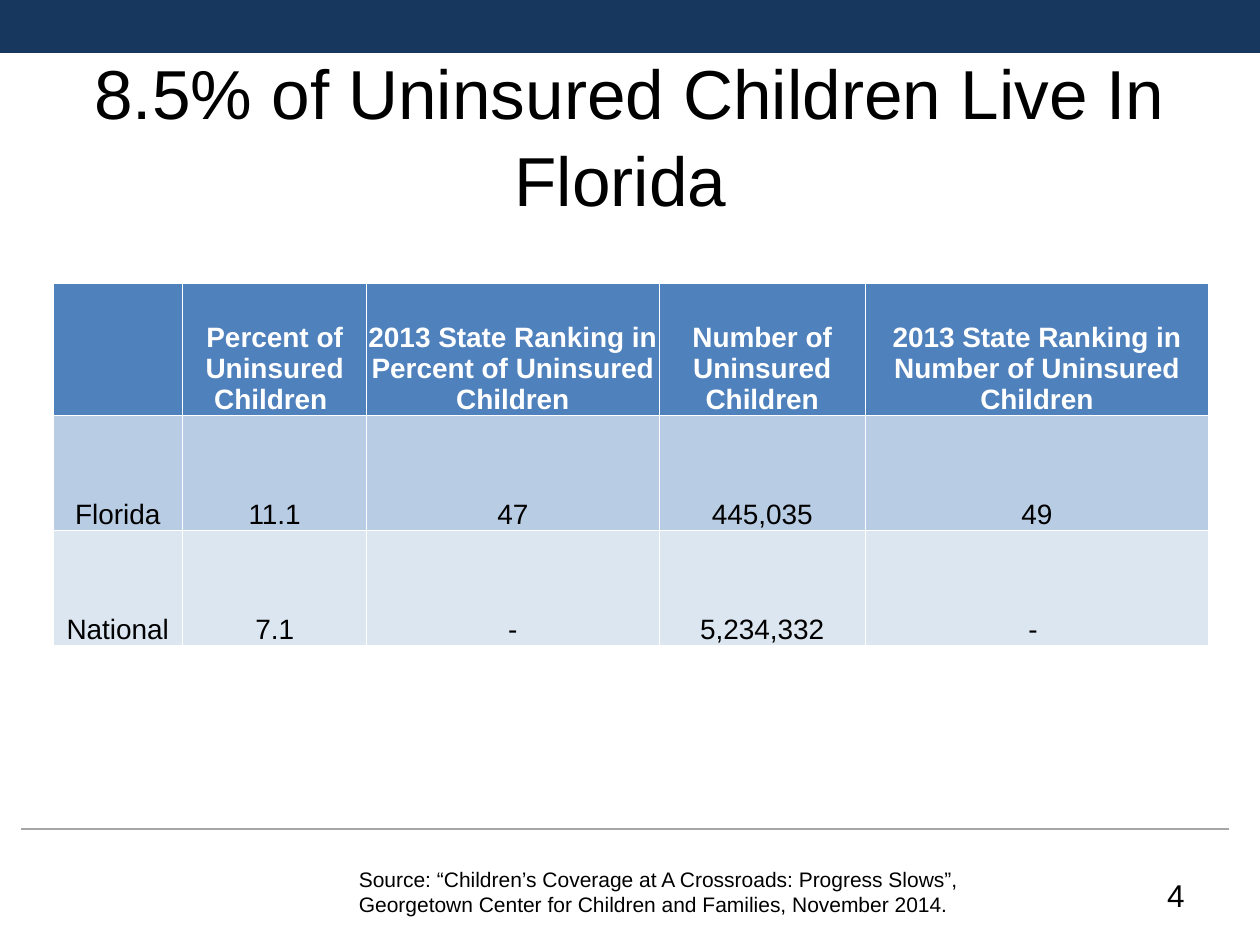
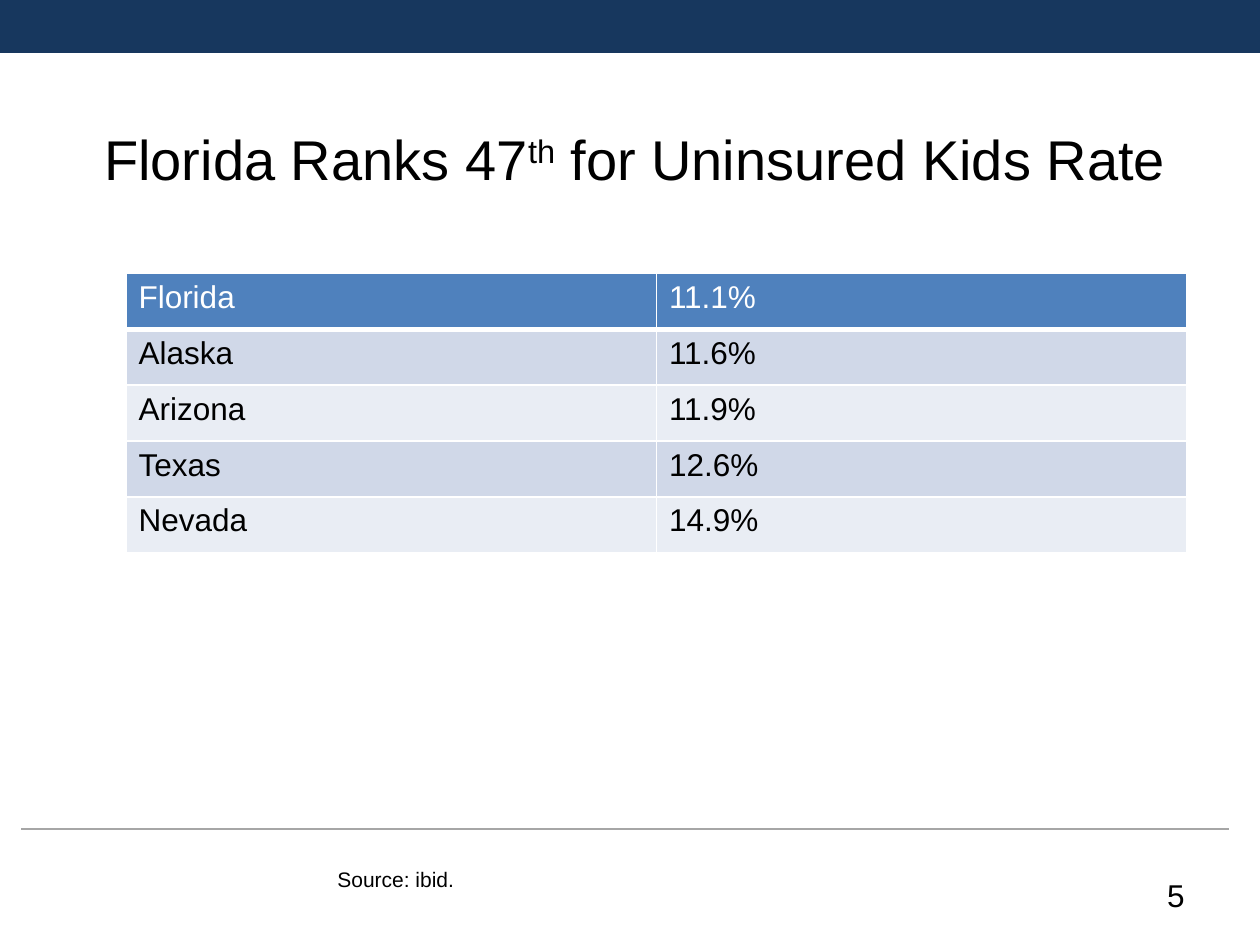
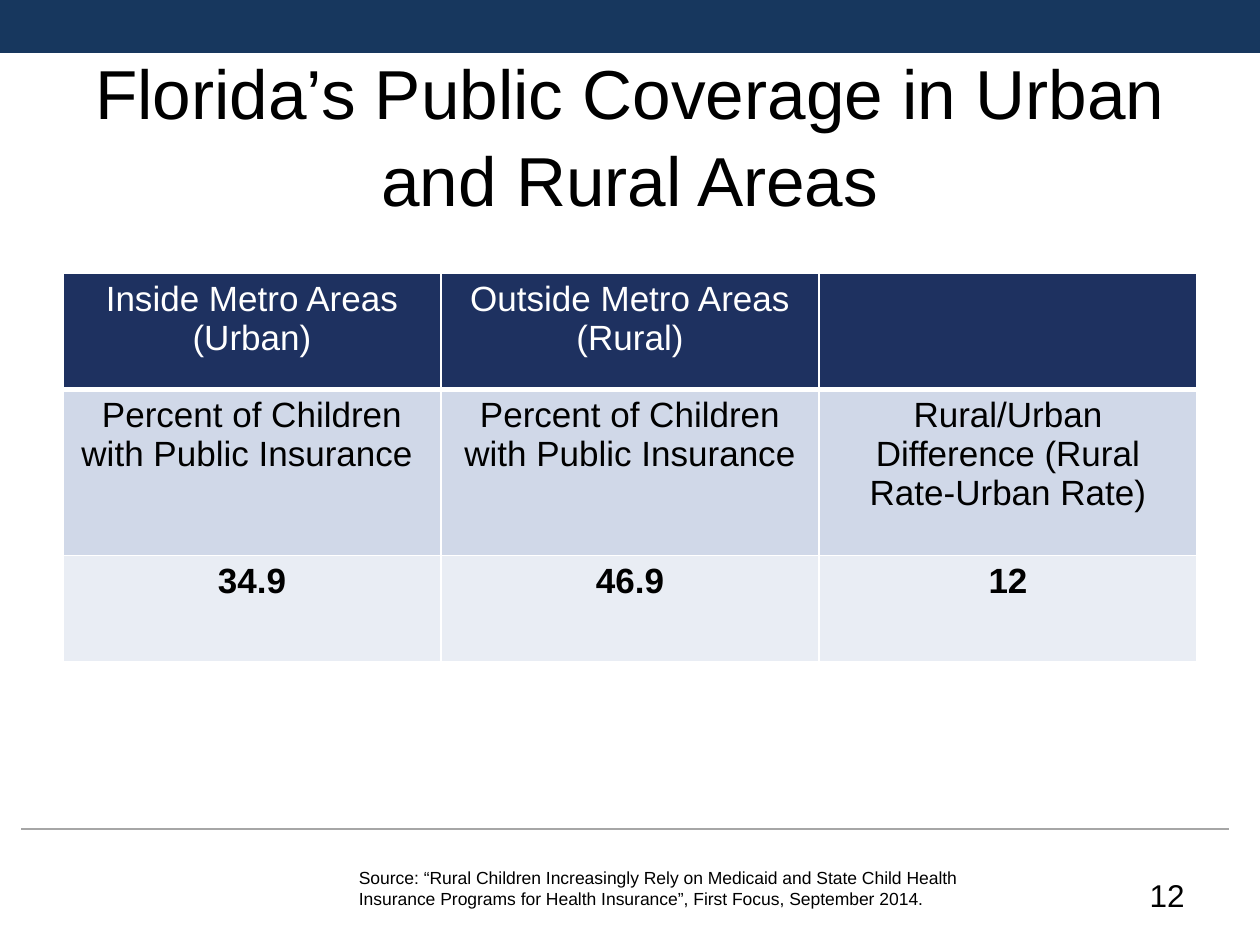
from lxml.etree import SubElement
from pptx import Presentation
from pptx.dml.color import RGBColor
from pptx.enum.shapes import MSO_CONNECTOR, MSO_SHAPE
from pptx.enum.text import MSO_ANCHOR, PP_ALIGN
from pptx.oxml.ns import qn
from pptx.util import Inches, Pt

COLORS = {
    "band": "17375E",
    "rule": "A6A6A6",
    "text": "000000",
    "white": "FFFFFF",
    "blue": "4F81BD",
    "navy": "1E3160",
    "ranking_dark": "B8CCE4",
    "ranking_light": "DCE6F1",
    "stripe_dark": "D0D8E8",
    "stripe_light": "E9EDF4",
}
STRIPES = ("stripe_dark", "stripe_light")
FONT = "Arial"


def rgb(name):
    return RGBColor.from_string(COLORS[name])


def write_text(paragraph, text, size=18, color="text", bold=False,
               align=PP_ALIGN.LEFT, superscript=False):
    paragraph.alignment = align
    run = paragraph.add_run()
    run.text = text
    run.font.name = FONT
    run.font.size = Pt(size)
    run.font.bold = bold
    run.font.color.rgb = rgb(color)
    if superscript:
        run.font._element.set("baseline", "30000")


class Deck:
    def __init__(self):
        self.presentation = Presentation()
        self.presentation.slide_width = Inches(10)
        self.presentation.slide_height = Inches(7.5)
        self.slide = None

    def add_slide(self, number):
        self.slide = self.presentation.slides.add_slide(self.presentation.slide_layouts[6])
        self.band()
        self.rule()
        frame = self.text_frame(7.17, 6.9, 2.33, 0.4)
        write_text(frame.paragraphs[0], str(number), align=PP_ALIGN.RIGHT)

    def band(self):
        shape = self.slide.shapes.add_shape(
            MSO_SHAPE.RECTANGLE, 0, 0, Inches(10), Inches(0.42))
        shape.shadow.inherit = False
        shape.fill.solid()
        shape.fill.fore_color.rgb = rgb("band")
        shape.line.fill.background()

    def rule(self):
        connector = self.slide.shapes.add_connector(
            MSO_CONNECTOR.STRAIGHT, Inches(0.17), Inches(6.58), Inches(9.75), Inches(6.58))
        connector.line.color.rgb = rgb("rule")
        connector.line.width = Pt(0.75)
        SubElement(connector._element.spPr, qn("a:effectLst"))

    def text_frame(self, left, top, width, height):
        shape = self.slide.shapes.add_textbox(
            Inches(left), Inches(top), Inches(width), Inches(height))
        shape.text_frame.word_wrap = True
        return shape.text_frame

    def title(self, *parts, width=9, height=1.05, size=39.6):
        frame = self.text_frame(0.5, 0.5, width, height)
        frame.vertical_anchor = MSO_ANCHOR.MIDDLE
        frame.margin_top = Inches(0.12)
        paragraph = frame.paragraphs[0]
        paragraph.line_spacing = 1.04
        for text in parts:
            write_text(paragraph, text, size=size, align=PP_ALIGN.CENTER,
                       superscript=text == "th")

    def source(self, text, left=2.75, height=0.5, size=12):
        frame = self.text_frame(left, 6.83, 5, height)
        write_text(frame.paragraphs[0], text, size=size)

    def table(self, rows, left, top, widths, heights, header, stripes=STRIPES,
              size=18, align=PP_ALIGN.CENTER, bold_rows=(), border=1,
              header_border=3, tight=False):
        table = self.slide.shapes.add_table(
            len(rows), len(widths), Inches(left), Inches(top),
            Inches(sum(widths)), Inches(sum(heights))).table
        table.first_row = table.horz_banding = False
        for column, width in zip(table.columns, widths):
            column.width = Inches(width)
        for index, (row, values) in enumerate(zip(table.rows, rows)):
            row.height = Inches(heights[index])
            fill = stripes[(index - 1) % 2] if index else header
            top_border = header_border if index == 1 else border
            bottom_border = border if index else header_border
            for cell, value in zip(row.cells, values):
                self.cell_borders(cell, L=border, R=border, T=top_border, B=bottom_border)
                cell.fill.solid()
                cell.fill.fore_color.rgb = rgb(fill)
                if tight:
                    cell.vertical_anchor = MSO_ANCHOR.BOTTOM
                    cell.margin_left = cell.margin_right = cell.margin_top = Inches(0.01)
                    cell.margin_bottom = 0
                if value:
                    write_text(cell.text_frame.paragraphs[0], value, size=size,
                               color="text" if index else "white",
                               bold=index in bold_rows, align=align)

    def cell_borders(self, cell, **widths):
        properties = cell._tc.get_or_add_tcPr()
        for side, width in widths.items():
            line = SubElement(properties, qn(f"a:ln{side}"), w=str(Pt(width)))
            SubElement(SubElement(line, qn("a:solidFill")), qn("a:srgbClr"),
                       val=COLORS["white"])


def main():
    deck = Deck()

    deck.add_slide(4)
    deck.title("8.5% of Uninsured Children Live In Florida ")
    deck.table(
        [["", "Percent of Uninsured Children ",
          "2013 State Ranking in Percent of Uninsured Children",
          "Number of Uninsured Children",
          "2013 State Ranking in Number of Uninsured Children"],
         ["Florida", "11.1", "47", "445,035", "49"],
         ["National", "7.1", "-", "5,234,332", "- "]],
        0.42, 2.25, [1.03, 1.46, 2.32, 1.64, 2.72], [1.05, 0.91, 0.91], "blue",
        stripes=("ranking_dark", "ranking_light"), size=16, bold_rows=(0,),
        border=0.5, header_border=0.5, tight=True)
    deck.source("Source: “Children’s Coverage at A Crossroads: Progress Slows”, "
                "Georgetown Center for Children and Families, November 2014.")

    deck.add_slide(5)
    deck.title("Florida Ranks 47", "th", " for Uninsured Kids Rate",
               width=9.08, height=1.42, size=32)
    deck.table(
        [["Florida", "11.1%"], ["Alaska", "11.6%"], ["Arizona", "11.9%"],
         ["Texas", "12.6%"], ["Nevada", "14.9%"]],
        1, 2.17, [4.21] * 2, [2.22 / 5] * 5, "blue", align=PP_ALIGN.LEFT)
    deck.source("Source: ibid.", left=2.58, height=0.3)

    deck.add_slide(12)
    deck.title("Florida’s Public Coverage in Urban and Rural Areas")
    deck.table(
        [["Inside Metro Areas (Urban)", "Outside Metro Areas (Rural)", ""],
         ["Percent of Children with Public Insurance ",
          "Percent of Children with Public Insurance",
          "Rural/Urban Difference (Rural Rate-Urban Rate)"],
         ["34.9", "46.9", "12"]],
        0.5, 2.17, [3] * 3, [0.92, 1.32, 0.84], "navy", size=20, bold_rows=(2,))
    deck.source("Source: “Rural Children Increasingly Rely on Medicaid and State Child Health "
                "Insurance Programs for Health Insurance”, First Focus, September 2014.",
                height=0.44, size=10)

    deck.presentation.save("out.pptx")


if __name__ == "__main__":
    main()
